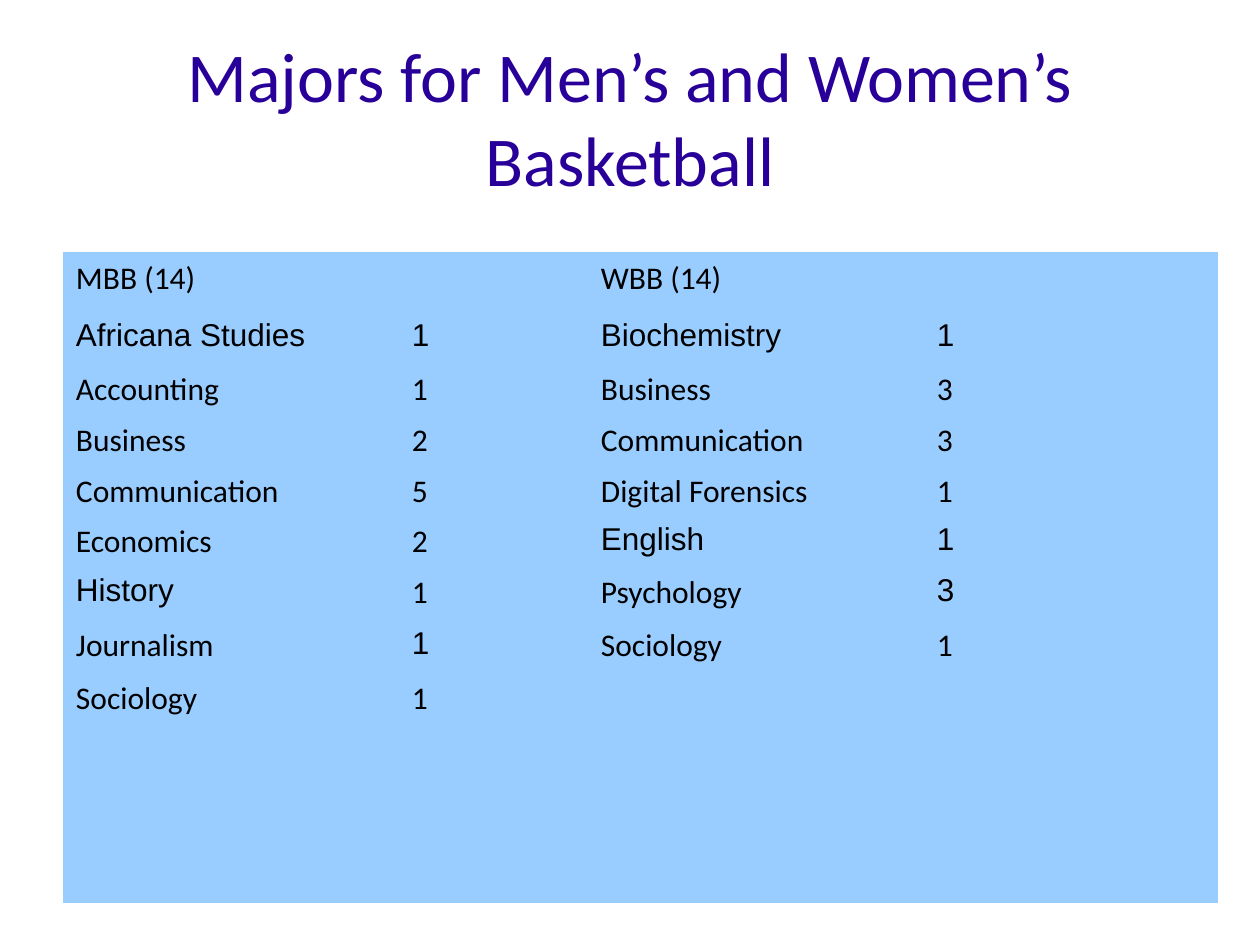
from dataclasses import dataclass

from pptx import Presentation
from pptx import util as u
from pptx.dml.color import RGBColor
from pptx.enum import text

PX = u.Inches(1) // 126
TITLE_COLOR = RGBColor(0x28, 0x00, 0x99)
TEXT_COLOR = RGBColor(0x00, 0x00, 0x00)
CELL_COLOR = RGBColor(0x99, 0xCC, 0xFF)

COLUMN_WIDTHS = (336, 189, 336, 294)
ROW_HEIGHTS = (59, 52, 50, 50, 50, 50, 53, 53, 54, 59, 59, 59)
CELL_FORMAT = {
    "margin_left": 13 * PX,
    "margin_top": 9 * PX,
    "margin_right": 13 * PX,
    "margin_bottom": 6 * PX,
    "vertical_anchor": text.MSO_ANCHOR.TOP,
}
TITLE_FORMAT = {
    "left": 63 * PX,
    "top": 38 * PX,
    "width": 1134 * PX,
    "height": 158 * PX,
}
TITLE_FRAME_FORMAT = {
    "margin_left": 0,
    "margin_top": 0,
    "margin_right": 0,
    "margin_bottom": 0,
    "word_wrap": True,
    "auto_size": text.MSO_AUTO_SIZE.NONE,
    "vertical_anchor": text.MSO_ANCHOR.MIDDLE,
}


@dataclass
class Major:
    name: str
    count: str = ""
    name_font: str = "Calibri"
    count_font: str = "Calibri"


MENS_MAJORS = (
    Major("MBB (14)"),
    Major("Africana Studies", "1", "Arial", "Arial"),
    Major("Accounting", "1"),
    Major("Business", "2"),
    Major("Communication", "5"),
    Major("Economics", "2"),
    Major("History", "1", "Arial"),
    Major("Journalism", "1", count_font="Arial"),
    Major("Sociology", "1"),
)
WOMENS_MAJORS = (
    Major("WBB (14)"),
    Major("Biochemistry", "1", "Arial", "Arial"),
    Major("Business", "3"),
    Major("Communication", "3"),
    Major("Digital Forensics", "1"),
    Major("English", "1", "Arial", "Arial"),
    Major("Psychology", "3", count_font="Arial"),
    Major("Sociology", "1"),
)


def apply_format(target: object, values: dict) -> None:
    for name, value in values.items():
        setattr(target, name, value)


def write(paragraph, wording: str, font: str, size: int, color: RGBColor) -> None:
    run = paragraph.add_run()
    run.text = wording
    apply_format(run.font, {"name": font, "size": u.Pt(size)})
    run.font.color.rgb = color


def fill_majors(table, first_column: int, majors: tuple[Major, ...]) -> None:
    for row, major in enumerate(majors):
        entries = ((major.name, major.name_font), (major.count, major.count_font))
        for column, (wording, font) in enumerate(entries, first_column):
            if wording:
                paragraph = table.cell(row, column).text_frame.paragraphs[0]
                paragraph.line_spacing = 0.93
                write(paragraph, wording, font, 18, TEXT_COLOR)


def add_title(slide) -> None:
    title = slide.shapes.title
    apply_format(title, TITLE_FORMAT)
    apply_format(title.text_frame, TITLE_FRAME_FORMAT)
    paragraph = title.text_frame.paragraphs[0]
    paragraph.alignment = text.PP_ALIGN.CENTER
    write(paragraph, "Majors for Men’s and Women’s Basketball", "Calibri", 40, TITLE_COLOR)


def add_majors_table(slide) -> None:
    table = slide.shapes.add_table(
        len(ROW_HEIGHTS), len(COLUMN_WIDTHS), 63 * PX, 252 * PX,
        sum(COLUMN_WIDTHS) * PX, sum(ROW_HEIGHTS) * PX,
    ).table
    apply_format(table, {"first_row": False, "horz_banding": False})
    # Borderless, gridless table style
    table._tbl.tblPr.find("{*}tableStyleId").text = "{2D5ABB26-0587-4C30-8999-92F81FD0307C}"
    for column, width in zip(table.columns, COLUMN_WIDTHS):
        column.width = width * PX
    for row, height in zip(table.rows, ROW_HEIGHTS):
        row.height = height * PX
    for cell in table.iter_cells():
        apply_format(cell, CELL_FORMAT)
        cell.fill.solid()
        cell.fill.fore_color.rgb = CELL_COLOR
    fill_majors(table, 0, MENS_MAJORS)
    fill_majors(table, 2, WOMENS_MAJORS)


def main() -> None:
    presentation = Presentation()
    apply_format(presentation, {"slide_width": u.Inches(10), "slide_height": u.Inches(7.5)})
    # Title Only layout
    slide = presentation.slides.add_slide(presentation.slide_layouts[5])
    add_title(slide)
    add_majors_table(slide)
    presentation.save("out.pptx")


if __name__ == "__main__":
    main()
